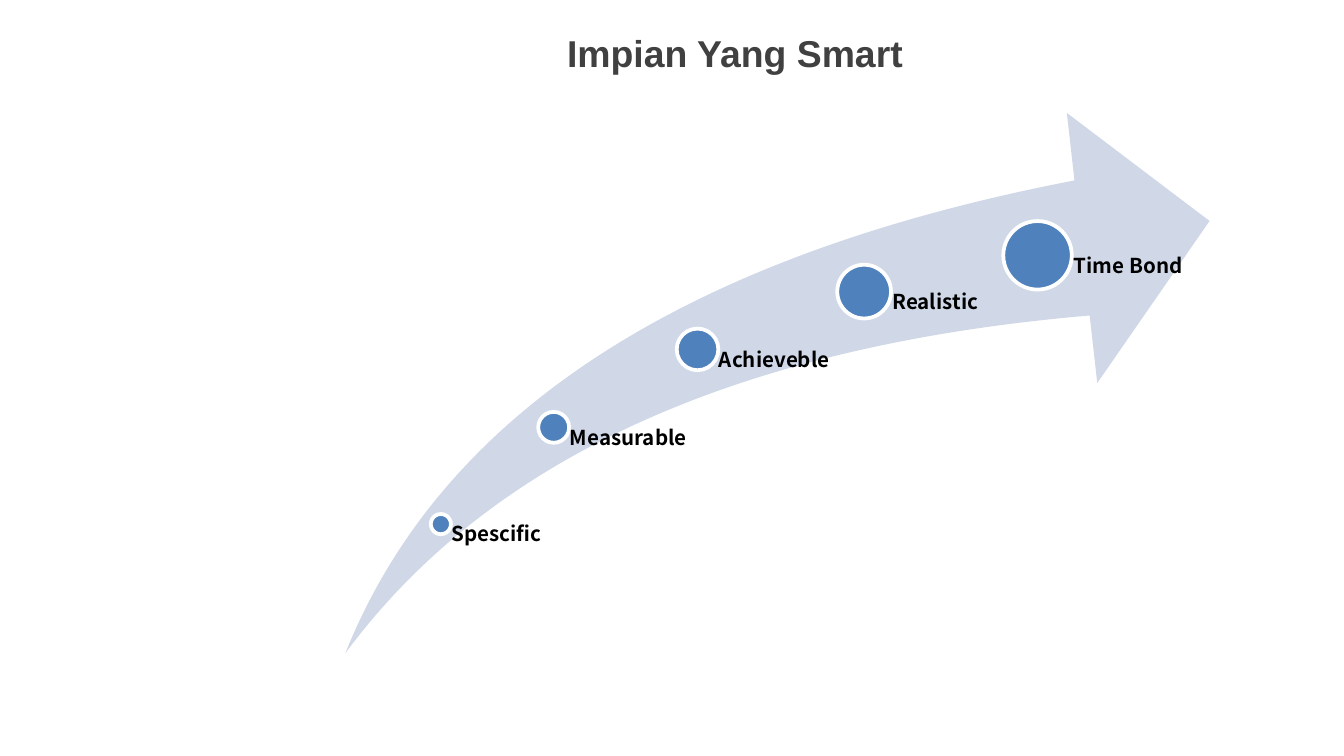
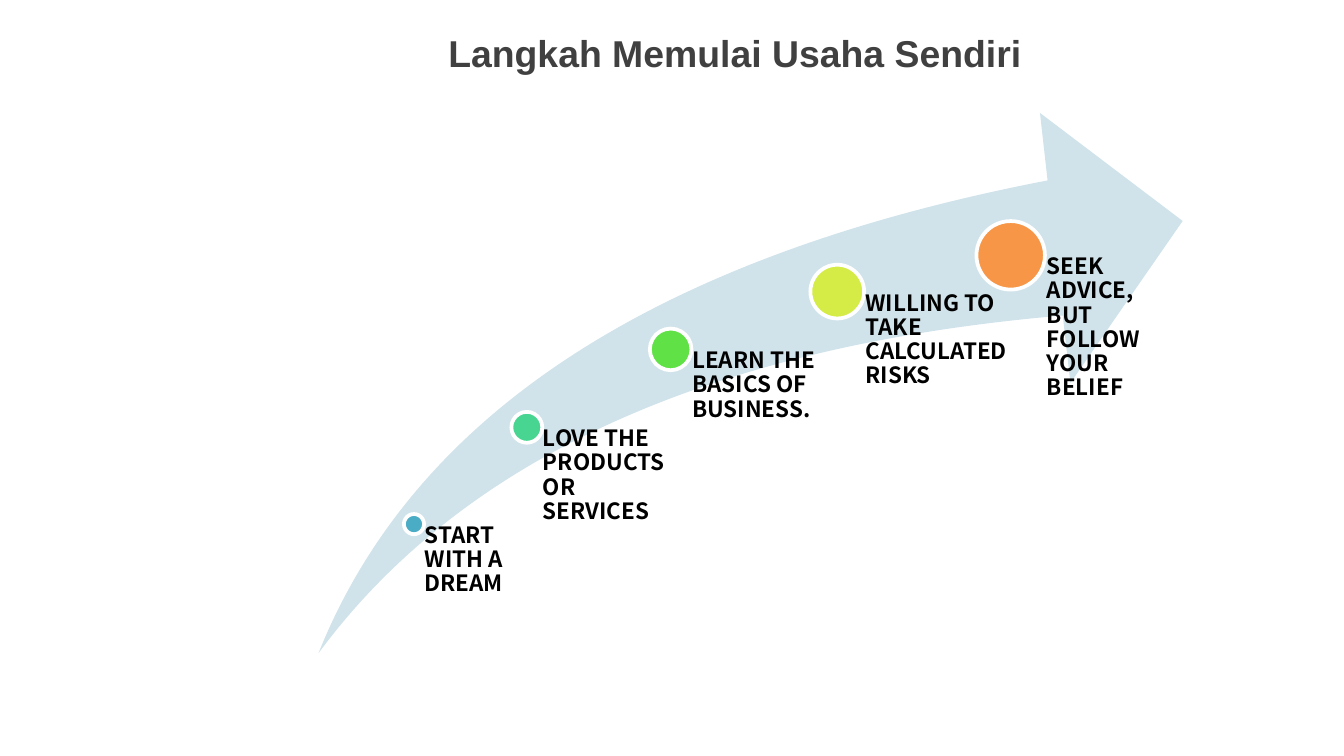
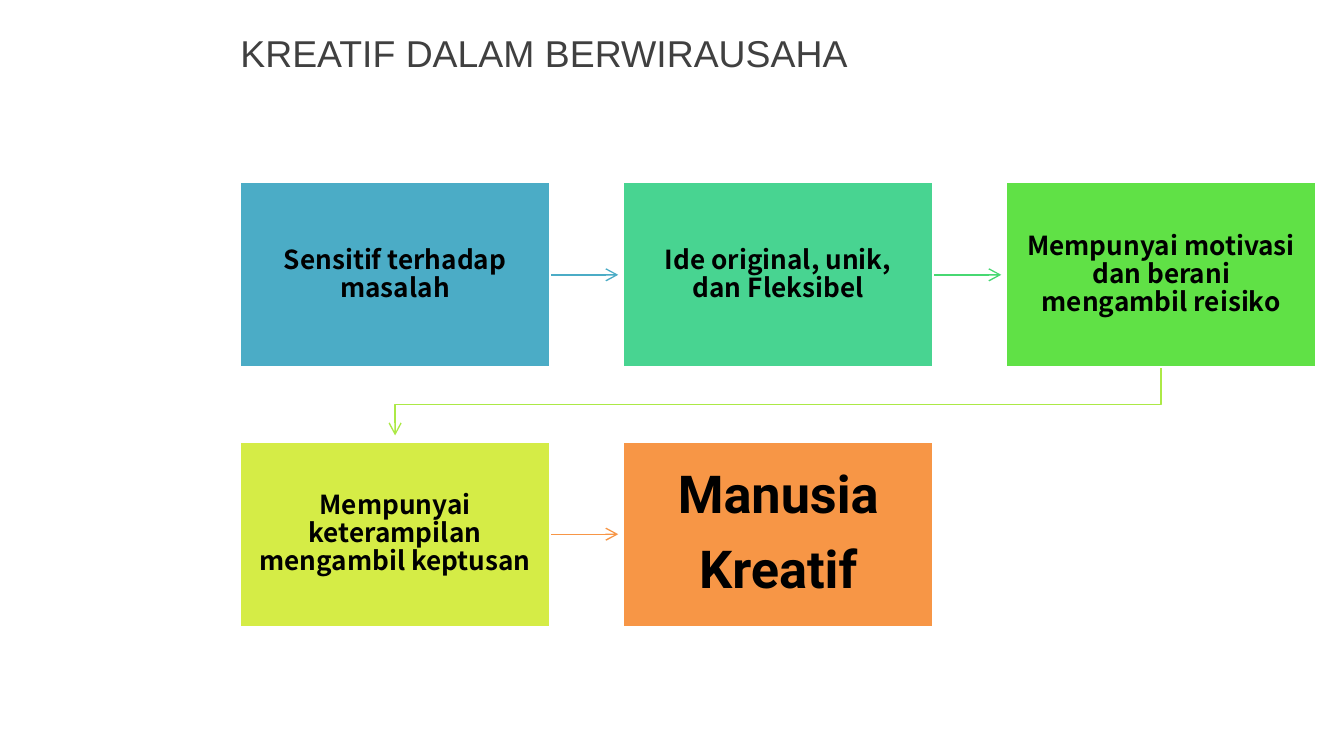
from dataclasses import dataclass

import lxml.etree
import pptx
import pptx.dml.color
import pptx.enum.shapes
import pptx.enum.text
import pptx.oxml.ns
import pptx.util

Inches = pptx.util.Inches
Pt = pptx.util.Pt
Shape = pptx.enum.shapes.MSO_SHAPE
Align = pptx.enum.text.PP_ALIGN
Anchor = pptx.enum.text.MSO_ANCHOR
qn = pptx.oxml.ns.qn


@dataclass(frozen=True)
class Theme:
    head: str = "404040"
    ink: str = "000000"
    white: str = "FFFFFF"
    blue: str = "4F81BD"
    pale: str = "D0D8E8"
    mist: str = "D0E3EA"
    teal: str = "4BACC6"
    mint: str = "48D491"
    leaf: str = "47D872"
    green: str = "60E146"
    moss: str = "ACE946"
    lime: str = "D5EC46"
    orange: str = "F79646"
    title: int = 20
    small: int = 11
    label: int = 12
    step: int = 14
    big: int = 28
    sans: str = "Arial"
    body: str = "Noto Sans CJK KR"
    strong: str = "Roboto"


T = Theme()


@dataclass(frozen=True)
class Dot:
    x: float
    y: float
    size: float
    wide: float


@dataclass(frozen=True)
class Step:
    text: str
    fill: str
    col: int
    row: int
    size: int = T.step
    font: str = T.body
    pad: float = 0.12


RAMP = (T.teal, T.mint, T.green, T.lime, T.orange)

SWOOSH_TOP, SWOOSH_WIDE, SWOOSH_HIGH = 0.84, 6.43, 4.02
DOTS = (
    Dot(0.71, 3.9, 0.15, 0.84),
    Dot(1.55, 3.18, 0.23, 1.07),
    Dot(2.62, 2.6, 0.31, 1.24),
    Dot(3.86, 2.17, 0.4, 1.29),
    Dot(5.15, 1.9, 0.51, 1.29),
)

BOX_LEFT, BOX_TOP, BOX_WIDE, BOX_HIGH = 1.78, 1.35, 2.32, 1.39
COL_STEP, ROW_STEP, REACH = 2.85, 1.93, 0.5
STEPS = (
    Step("Sensitif terhadap masalah", T.teal, 0, 0),
    Step("Ide original, unik, dan Fleksibel", T.mint, 1, 0),
    Step("Mempunyai motivasi dan berani mengambil reisiko", T.green, 2, 0),
    Step("Mempunyai keterampilan mengambil keptusan", T.lime, 0, 1),
    Step("Manusia\nKreatif", T.orange, 1, 1, T.big, T.strong, 0.22),
)


def tint(code: str):
    return pptx.dml.color.RGBColor.from_string(code)


def write(shape, text: str, *, size: int, font: str = T.body, color: str = T.ink,
          bold: bool = True, align=Align.LEFT, anchor=Anchor.TOP,
          pads=(0.1, 0.05, 0.1, 0.05), lead: float = 1.0, after: float = 0) -> None:
    frame = shape.text_frame
    frame.word_wrap = True
    frame.vertical_anchor = anchor
    (frame.margin_left, frame.margin_top,
     frame.margin_right, frame.margin_bottom) = map(Inches, pads)
    frame.text = text
    for para in frame.paragraphs:
        para.alignment = align
        para.line_spacing = lead
        para.space_after = Pt(size * after)
        for run in para.runs:
            run.font.size = Pt(size)
            run.font.name = font
            run.font.bold = bold
            run.font.color.rgb = tint(color)


def add_form(slide, kind, x: float, y: float, w: float, h: float,
             fill: str, edge: bool = True):
    form = slide.shapes.add_shape(kind, Inches(x), Inches(y), Inches(w), Inches(h))
    form.shadow.inherit = False
    form.fill.solid()
    form.fill.fore_color.rgb = tint(fill)
    if edge:
        form.line.color.rgb = tint(T.white)
        form.line.width = Pt(2)
    else:
        form.line.fill.background()
    return form


def add_text(slide, x: float, y: float, w: float, h: float, text: str, **style) -> None:
    box = slide.shapes.add_textbox(Inches(x), Inches(y), Inches(w), Inches(h))
    write(box, text, **style)


def add_slide(deck, title: str, bold: bool = True, align=Align.CENTER):
    slide = deck.slides.add_slide(deck.slide_layouts[6])
    add_text(slide, 1.69, 0.14, 7.56, 0.5, title, size=T.title, font=T.sans,
             color=T.head, bold=bold, align=align, anchor=Anchor.MIDDLE)
    return slide


def draw_rise(slide, left: float, fill: str, fills, labels, size: int) -> None:
    swoosh = add_form(slide, Shape.SWOOSH_ARROW, left, SWOOSH_TOP,
                      SWOOSH_WIDE, SWOOSH_HIGH, fill, edge=False)
    swoosh.adjustments[0] = swoosh.adjustments[1] = 0.25
    base = SWOOSH_TOP + SWOOSH_HIGH
    for dot, color, label in zip(DOTS, fills, labels):
        x = left + dot.x
        half = dot.size / 2
        add_form(slide, Shape.OVAL, x - half, dot.y - half, dot.size, dot.size, color)
        add_text(slide, x, dot.y, dot.wide, base - dot.y, label, size=size,
                 pads=(round(dot.size * 0.53, 2), 0, 0, 0), lead=0.9, after=0.35)


def style_line(line, color: str) -> None:
    line.line.color.rgb = tint(color)
    line.line.width = Pt(0.75)
    edge = line.element.spPr.find(qn("a:ln"))
    lxml.etree.SubElement(edge, qn("a:tailEnd"), type="arrow")


def add_link(slide, box, color: str) -> None:
    x = box.left + box.width
    y = box.top + box.height // 2
    link = slide.shapes.add_connector(pptx.enum.shapes.MSO_CONNECTOR.STRAIGHT,
                                      x, y, x + Inches(REACH), y)
    link.begin_connect(box, 3)
    style_line(link, color)
    lxml.etree.SubElement(link.element.spPr, qn("a:effectLst"))


def add_turn(slide, start, end, color: str) -> None:
    x1, y1 = start.left + start.width // 2, start.top + start.height
    x2, y2 = end.left + end.width // 2, y1 + Inches(REACH)
    mid = (y1 + end.top) // 2
    pen = slide.shapes.build_freeform(x1, y1)
    pen.add_line_segments([(x1, mid), (x2, mid), (x2, y2)], close=False)
    turn = pen.convert_to_shape()
    turn.shadow.inherit = False
    turn.fill.background()
    style_line(turn, color)


def draw_flow(slide) -> None:
    boxes = []
    for step in STEPS:
        box = add_form(slide, Shape.RECTANGLE, BOX_LEFT + step.col * COL_STEP,
                       BOX_TOP + step.row * ROW_STEP, BOX_WIDE, BOX_HIGH, step.fill)
        write(box, step.text, size=step.size, font=step.font, align=Align.CENTER,
              anchor=Anchor.MIDDLE, pads=(step.pad,) * 4, lead=0.9, after=0.35)
        boxes.append(box)
    for place, color in ((0, T.teal), (1, T.leaf), (3, T.orange)):
        add_link(slide, boxes[place], color)
    add_turn(slide, boxes[2], boxes[3], T.moss)


def main() -> None:
    deck = pptx.Presentation()
    deck.slide_width = Inches(10)
    deck.slide_height = Inches(10 * 9 / 16)

    smart = add_slide(deck, "Impian Yang Smart")
    draw_rise(smart, 2.57, T.pale, (T.blue,) * len(DOTS),
              ("Spescific", "Measurable", "Achieveble", "Realistic", "Time Bond"),
              T.small)

    start = add_slide(deck, "Langkah Memulai Usaha Sendiri")
    draw_rise(start, 2.37, T.mist, RAMP,
              ("START WITH A DREAM", "LOVE THE PRODUCTS OR SERVICES",
               "LEARN THE BASICS OF BUSINESS.", "WILLING TO TAKE CALCULATED RISKS",
               "SEEK ADVICE, BUT FOLLOW YOUR BELIEF"), T.label)

    draw_flow(add_slide(deck, "KREATIF DALAM BERWIRAUSAHA", bold=False,
                        align=Align.LEFT))
    deck.save("out.pptx")


if __name__ == "__main__":
    main()
